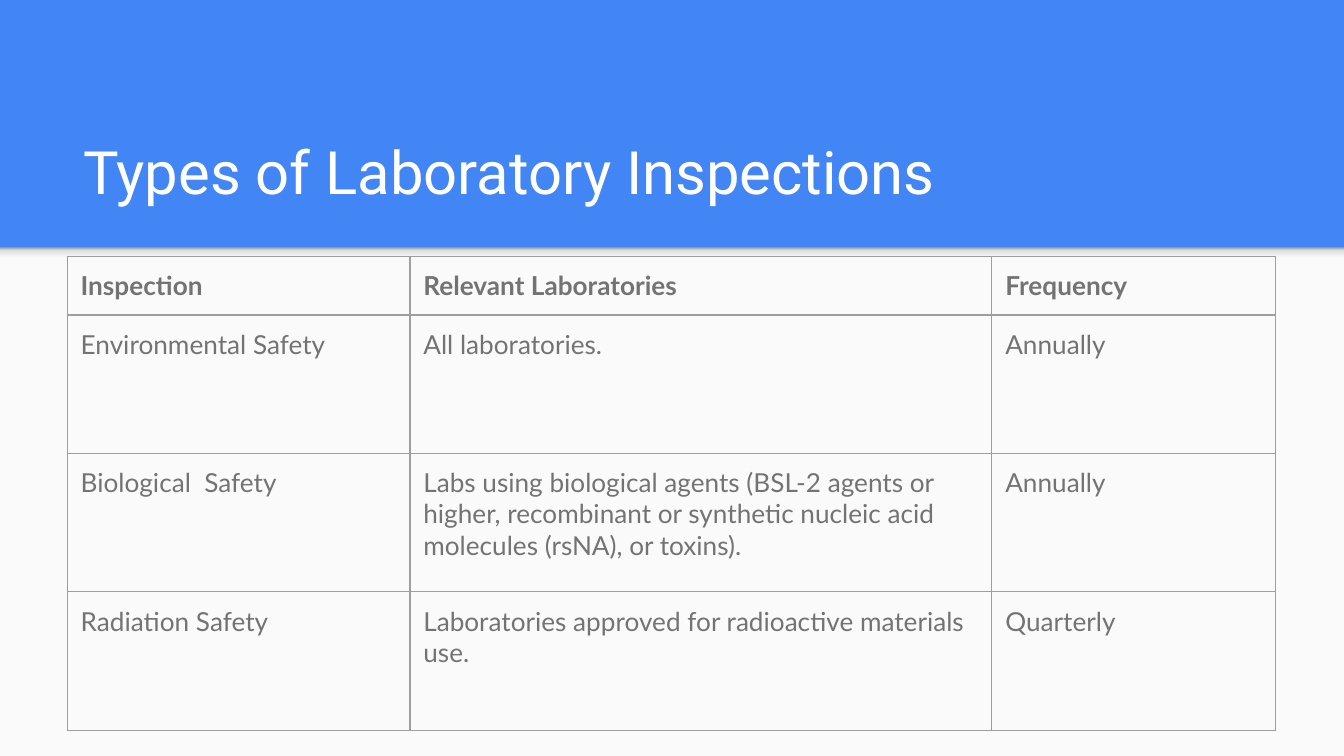
from copy import deepcopy
from typing import NamedTuple

from lxml.etree import SubElement
from pptx import Presentation
from pptx.dml.color import RGBColor
from pptx.enum.shapes import MSO_SHAPE as Preset
from pptx.enum.text import MSO_ANCHOR as Anchor
from pptx.oxml.ns import qn
from pptx.util import Inches, Pt

SLIDE_W = 10
SLIDE_H = SLIDE_W * 9 / 16
BLUE, PAPER, WHITE = "4285F4", "FAFAFA", "FFFFFF"
GREY_TEXT, GREY_LINE = "737373", "9E9E9E"
HEADER_H = 1.84
INSET = Inches(0.1)
COLUMN_WIDTHS = (2.55, 4.33, 2.11)
HEADING_ROW_H, BODY_ROW_H = 0.43, 1.03


class Box(NamedTuple):
    """Left, top, width and height in inches."""
    left: float
    top: float
    width: float
    height: float

    def emu(self) -> list:
        return [Inches(length) for length in self]


class Inspection(NamedTuple):
    name: str
    laboratories: str
    frequency: str


class Stop(NamedTuple):
    percent: int
    color: str


HEADINGS = Inspection("Inspection", "Relevant Laboratories", "Frequency")
INSPECTIONS = (
    Inspection("Environmental Safety", "All laboratories.", "Annually"),
    Inspection(
        "Biological  Safety",
        "Labs using biological agents (BSL-2 agents or higher, recombinant or "
        "synthetic nucleic acid molecules (rsNA), or toxins).",
        "Annually",
    ),
    Inspection(
        "Radiation Safety",
        "Laboratories approved for radioactive materials use.",
        "Quarterly",
    ),
)
SHADOW_STOPS = (Stop(0, "F9F9F9"), Stop(36, "F9F9F9"), Stop(80, "DEDEDE"), Stop(100, "999999"))


def rgb(color: str) -> RGBColor:
    return RGBColor.from_string(color)


def write(holder, text: str, font_name: str, size: float, color: str, bold: bool = False) -> None:
    """Put one styled paragraph into a text frame or table cell, with even insets."""
    holder.margin_left = holder.margin_right = INSET
    holder.margin_top = holder.margin_bottom = INSET
    frame = getattr(holder, "text_frame", holder)
    frame.word_wrap = True
    paragraph = frame.paragraphs[0]
    paragraph.text = text
    font = paragraph.font
    font.name, font.size, font.bold = font_name, Pt(size), bold
    font.color.rgb = rgb(color)


def add_panel(slide, box: Box):
    panel = slide.shapes.add_shape(Preset.RECTANGLE, *box.emu())
    panel.shadow.inherit = False
    panel.line.fill.background()
    return panel


def fill_gradient(panel, stops: tuple[Stop, ...]) -> None:
    """Fill from the bottom edge up through all the stops."""
    panel.fill.gradient()
    panel.fill.gradient_angle = 90
    stop_list = panel.fill._fill._gradFill.find(qn("a:gsLst"))
    for _ in range(len(stops) - len(stop_list)):
        stop_list.append(deepcopy(stop_list[0]))
    for target, stop in zip(panel.fill.gradient_stops, stops):
        target.position = stop.percent / 100
        target.color.rgb = rgb(stop.color)


def add_borders(cell, color: str, points: float) -> None:
    properties = cell._tc.get_or_add_tcPr()
    for side in ("lnL", "lnR", "lnT", "lnB"):
        line = SubElement(properties, qn(f"a:{side}"), w=str(Pt(points)))
        SubElement(SubElement(line, qn("a:solidFill")), qn("a:srgbClr"), val=color)


def add_inspection_table(slide, left: float, top: float) -> None:
    records = (HEADINGS, *INSPECTIONS)
    heights = (HEADING_ROW_H, *[BODY_ROW_H] * len(INSPECTIONS))
    box = Box(left, top, sum(COLUMN_WIDTHS), sum(heights))
    table = slide.shapes.add_table(len(records), len(COLUMN_WIDTHS), *box.emu()).table
    table.first_row = table.horz_banding = False
    for column, width in zip(table.columns, COLUMN_WIDTHS):
        column.width = Inches(width)
    for row, height, record in zip(table.rows, heights, records):
        row.height = Inches(height)
        for cell, text in zip(row.cells, record):
            write(cell, text, "Lato", 14, GREY_TEXT, bold=record is HEADINGS)
            add_borders(cell, GREY_LINE, 0.75)
            cell.fill.background()


def main() -> None:
    deck = Presentation()
    deck.slide_width, deck.slide_height = Inches(SLIDE_W), Inches(SLIDE_H)
    slide = deck.slides.add_slide(deck.slide_layouts[6])
    slide.background.fill.solid()
    slide.background.fill.fore_color.rgb = rgb(BLUE)

    body = add_panel(slide, Box(0, HEADER_H, SLIDE_W, SLIDE_H - HEADER_H))
    body.fill.solid()
    body.fill.fore_color.rgb = rgb(PAPER)
    fill_gradient(add_panel(slide, Box(0, HEADER_H, SLIDE_W, 0.12)), SHADOW_STOPS)

    title = slide.shapes.add_textbox(*Box(0.52, 0.8, 8.99, 0.84).emu()).text_frame
    title.vertical_anchor = Anchor.BOTTOM
    write(title, "Types of Laboratory Inspections", "Roboto", 32, WHITE)

    add_inspection_table(slide, 0.5, 1.91)
    deck.save("out.pptx")


if __name__ == "__main__":
    main()
